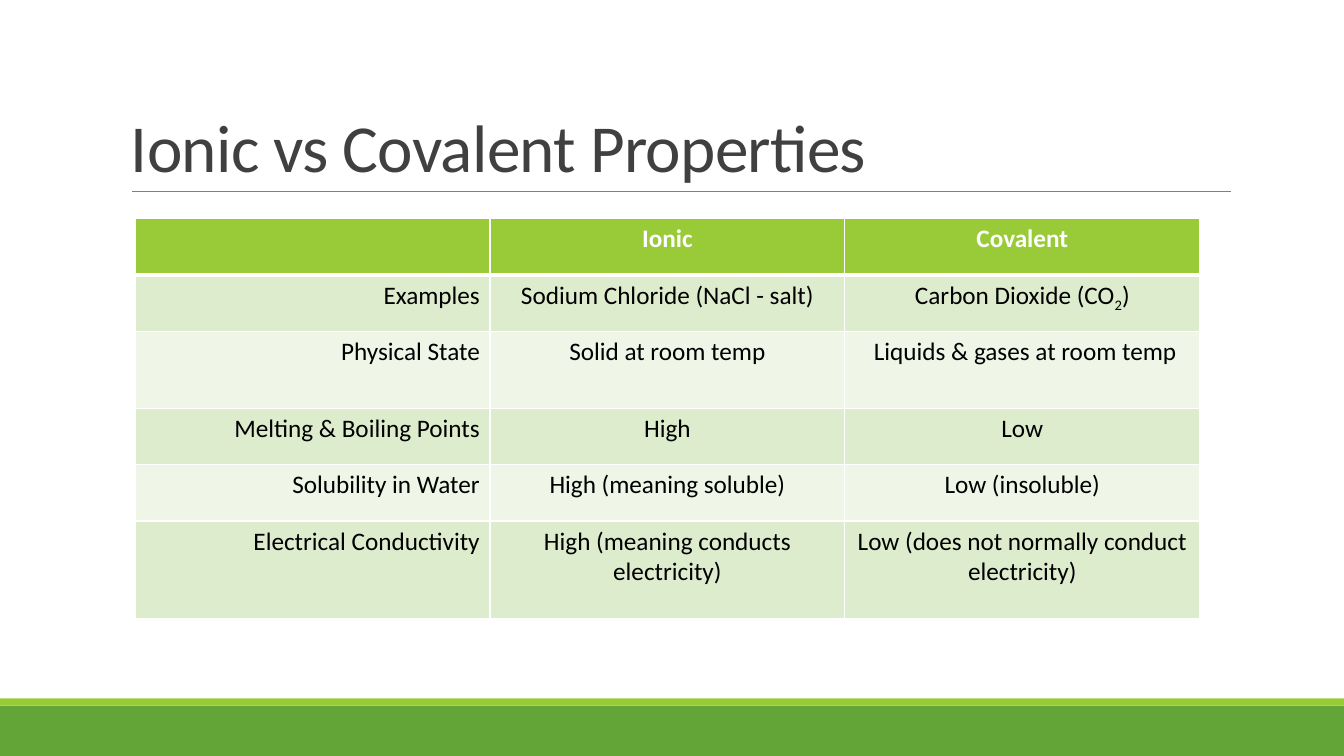
from dataclasses import dataclass

from lxml.etree import SubElement
from pptx import Presentation
from pptx.dml.color import RGBColor
from pptx.enum.shapes import MSO_CONNECTOR, MSO_SHAPE
from pptx.enum.text import MSO_ANCHOR, PP_ALIGN
from pptx.oxml import parse_xml
from pptx.oxml.ns import nsdecls, qn
from pptx.slide import Slide
from pptx.table import _Cell
from pptx.text.text import _Run
from pptx.util import Inches, Pt

WHITE = RGBColor(0xFF, 0xFF, 0xFF)
BLACK = RGBColor(0x00, 0x00, 0x00)
GREY = RGBColor(0x80, 0x80, 0x80)
CHARCOAL = RGBColor(0x40, 0x40, 0x40)
GREEN = RGBColor(0x63, 0xA5, 0x37)
LIME = RGBColor(0x99, 0xCB, 0x38)
PALE_GREEN = RGBColor(0xDE, 0xEC, 0xCE)
PALEST_GREEN = RGBColor(0xEF, 0xF6, 0xE8)

SLIDE_WIDTH = 13.33
COLUMN_WIDTH = 3.52
SUBSCRIPT_MARK = "~"


@dataclass(frozen=True)
class Band:
    top: float
    height: float
    color: RGBColor


@dataclass(frozen=True)
class Property:
    name: str
    ionic: str
    covalent: str
    height: float = 0.56


FOOTER_BANDS = [Band(7, 0.5, GREEN), Band(6.93, 0.07, LIME)]
PROPERTIES = [
    Property("", "Ionic", "Covalent"),
    Property("Examples", "Sodium Chloride (NaCl - salt)", "Carbon Dioxide (CO~2~)"),
    Property("Physical State", "Solid at room temp", " Liquids & gases at room temp", 0.76),
    Property("Melting & Boiling Points", "High", "Low"),
    Property("Solubility in Water", "High (meaning soluble)", "Low (insoluble)"),
    Property(
        "Electrical Conductivity",
        "High (meaning conducts electricity)",
        "Low (does not normally conduct electricity)",
        0.97,
    ),
]


def format_run(run: _Run, color: RGBColor, **font_format: object) -> None:
    for attribute, value in {"name": "Calibri", **font_format}.items():
        setattr(run.font, attribute, value)
    run.font.color.rgb = color


def add_band(slide: Slide, band: Band) -> None:
    strip = slide.shapes.add_shape(
        MSO_SHAPE.RECTANGLE, 0, Inches(band.top), Inches(SLIDE_WIDTH), Inches(band.height)
    )
    strip.shadow.inherit = False
    strip.fill.solid()
    strip.fill.fore_color.rgb = band.color
    strip.line.fill.background()


def add_title(slide: Slide, text: str) -> None:
    """Add the title and the thin rule beneath it."""
    title = slide.shapes.add_textbox(Inches(1.2), Inches(0.31), Inches(11), Inches(1.59))
    frame = title.text_frame
    frame.word_wrap = True
    frame.vertical_anchor = MSO_ANCHOR.BOTTOM
    paragraph = frame.paragraphs[0]
    paragraph.line_spacing = 0.85
    run = paragraph.add_run()
    run.text = text
    format_run(run, CHARCOAL, size=Pt(48))
    run.font._element.set("spc", "-50")

    rule = slide.shapes.add_connector(
        MSO_CONNECTOR.STRAIGHT, Inches(1.31), Inches(1.9), Inches(12.21), Inches(1.9)
    )
    rule.line.color.rgb = GREY
    rule.line.width = Pt(0.5)
    SubElement(rule._element.spPr, qn("a:effectLst"))


def set_borders(cell: _Cell, top: float, bottom: float) -> None:
    """Draw white borders; top and bottom widths are in points."""
    widths = {"lnL": 1, "lnR": 1, "lnT": top, "lnB": bottom}
    for position, (side, width) in enumerate(widths.items()):
        border = parse_xml(
            f'<a:{side} {nsdecls("a")} w="{Pt(width)}"><a:solidFill>'
            f'<a:srgbClr val="{WHITE}"/></a:solidFill></a:{side}>'
        )
        cell._tc.get_or_add_tcPr().insert(position, border)


def fill_cell(cell: _Cell, text: str, row: int, column: int) -> None:
    is_header = row == 0
    cell.fill.solid()
    cell.fill.fore_color.rgb = LIME if is_header else (PALEST_GREEN, PALE_GREEN)[row % 2]
    set_borders(cell, top=3 if row == 1 else 1, bottom=3 if is_header else 1)
    paragraph = cell.text_frame.paragraphs[0]
    paragraph.alignment = PP_ALIGN.CENTER if column else PP_ALIGN.RIGHT
    for index, piece in enumerate(text.split(SUBSCRIPT_MARK)):
        if not piece:
            continue
        run = paragraph.add_run()
        run.text = piece
        format_run(run, WHITE if is_header else BLACK, size=Pt(18), bold=is_header)
        if index % 2:
            run.font._element.set("baseline", "-25000")


def add_property_table(slide: Slide, properties: list[Property]) -> None:
    total_height = sum(item.height for item in properties)
    table = slide.shapes.add_table(
        len(properties), 3, Inches(1.34), Inches(2.17),
        Inches(3 * COLUMN_WIDTH), Inches(total_height),
    ).table
    for table_column in table.columns:
        table_column.width = Inches(COLUMN_WIDTH)
    for row, item in enumerate(properties):
        table.rows[row].height = Inches(item.height)
        for column, text in enumerate((item.name, item.ionic, item.covalent)):
            fill_cell(table.cell(row, column), text, row, column)


def main() -> None:
    presentation = Presentation()
    presentation.slide_width = Inches(SLIDE_WIDTH)
    presentation.slide_height = Inches(7.5)
    slide = presentation.slides.add_slide(presentation.slide_layouts[6])
    for band in FOOTER_BANDS:
        add_band(slide, band)
    add_title(slide, "Ionic vs Covalent Properties")
    add_property_table(slide, PROPERTIES)
    presentation.save("out.pptx")


if __name__ == "__main__":
    main()
